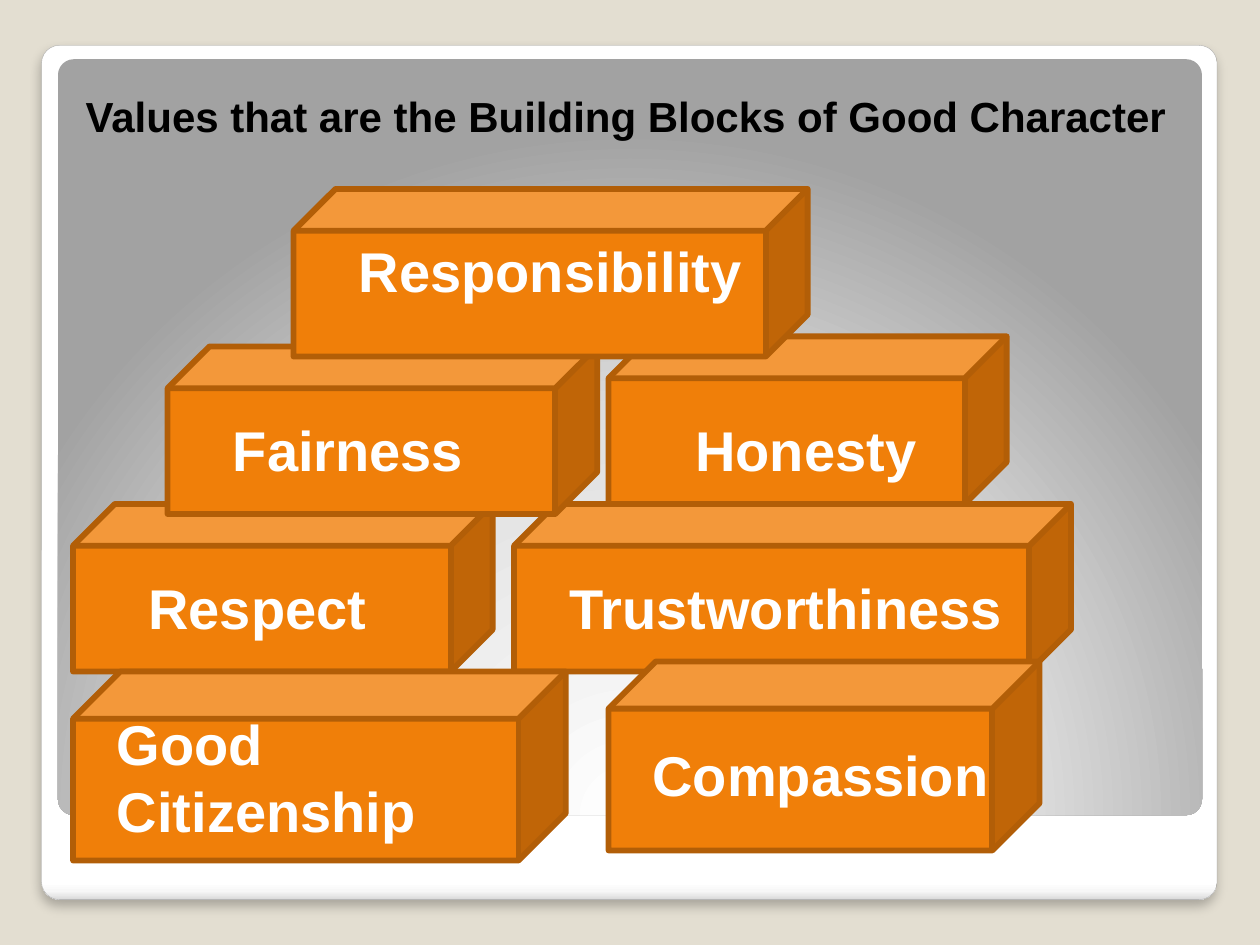
from pptx import Presentation
from pptx.dml.color import RGBColor
from pptx.enum.shapes import MSO_SHAPE
from pptx.enum.text import MSO_ANCHOR, MSO_AUTO_SIZE, PP_ALIGN
from pptx.oxml import parse_xml
from pptx.oxml.ns import nsdecls, qn
from pptx.util import Inches, Pt

SAND = RGBColor(0xE3, 0xDE, 0xD1)
GRAY = RGBColor(0xA4, 0xA4, 0xA4)
ORANGE = RGBColor(0xF0, 0x7F, 0x09)
BROWN = RGBColor(0xB2, 0x5E, 0x07)
WHITE = RGBColor(0xFF, 0xFF, 0xFF)
BLACK = RGBColor(0, 0, 0)

FRAME = [(0, "FFFFFF"), (98, "FFFFFF"), (99, "F7F7F7"), (100, "DADADA")]
DOWN = '<a:lin ang="5400000" scaled="0"/>'
GLOW = [(0, "FFFFFF"), (55, "E1E1E1"), (100, "A2A2A2")]
ROUND = ('<a:path path="circle"><a:fillToRect l="50000" t="175000" '
         'r="50000" b="-75000"/></a:path>')

# Back to front: left, top, width, height
BLOCKS = [
    (4.83, 2.67, 3.16, 1.33),
    (0.58, 4, 3.33, 1.33),
    (4.08, 4, 4.42, 1.33),
    (1.33, 2.75, 3.41, 1.33),
    (0.58, 5.33, 3.91, 1.5),
    (2.33, 1.5, 4.08, 1.33),
    (4.83, 5.25, 3.42, 1.5),
]
VALUES = [
    ("Good Citizenship", 0.83, 5.58, 3.83, 1.18),
    ("Compassion", 5.08, 5.83, 3, 0.64),
    ("Trustworthiness", 4.42, 4.5, 4, 0.64),
    ("Respect", 1.08, 4.5, 2.67, 0.64),
    ("Fairness", 1.75, 3.25, 2.83, 0.64),
    ("Honesty", 5.42, 3.25, 2.75, 0.64),
    ("Responsibility", 2.75, 1.83, 3.75, 0.64),
]


class Deck:
    font = "Arial"

    def __init__(self, slide):
        self.slide = slide
        self.shapes = slide.shapes

    def add(self, kind, box):
        shape = self.shapes.add_shape(kind, *map(Inches, box))
        shape.shadow.inherit = False
        return shape

    def panel(self, box, stops, kind):
        shape = self.add(MSO_SHAPE.ROUNDED_RECTANGLE, box)
        shape.adjustments[0] = 0.021
        shape.line.fill.background()
        shape.fill.background()
        marks = "".join(
            f'<a:gs pos="{pos * 1000}"><a:srgbClr val="{color}"/></a:gs>'
            for pos, color in stops)
        grad = parse_xml(f'<a:gradFill {nsdecls("a")} rotWithShape="1">'
                         f'<a:gsLst>{marks}</a:gsLst>{kind}</a:gradFill>')
        props = shape.element.spPr
        props.replace(props.find(qn("a:noFill")), grad)
        return shape

    def shade(self, shape):
        effects = shape.element.spPr.find(qn("a:effectLst"))
        effects.append(parse_xml(
            f'<a:outerShdw {nsdecls("a")} blurRad="{Pt(6)}" dist="{Pt(4)}" '
            'dir="5400000" algn="t" rotWithShape="0"><a:srgbClr val="000000">'
            '<a:alpha val="25000"/></a:srgbClr></a:outerShdw>'))

    def block(self, box):
        shape = self.add(MSO_SHAPE.CUBE, box)
        shape.fill.solid()
        shape.fill.fore_color.rgb = ORANGE
        shape.line.color.rgb = BROWN
        shape.line.width = Pt(3.35)

    def style(self, shape, text, size, color):
        frame = shape.text_frame
        frame.text = text
        frame.word_wrap = True
        frame.auto_size = MSO_AUTO_SIZE.SHAPE_TO_FIT_TEXT
        frame.vertical_anchor = MSO_ANCHOR.TOP
        line = frame.paragraphs[0]
        line.alignment = PP_ALIGN.LEFT
        font = line.runs[0].font
        font.name, font.size, font.bold = self.font, Pt(size), True
        font.color.rgb = color

    def label(self, text, *box):
        shape = self.shapes.add_textbox(*map(Inches, box))
        self.style(shape, text, 32, WHITE)

    def title(self, text, *box):
        shape = self.shapes.title
        shape.left, shape.top, shape.width, shape.height = map(Inches, box)
        self.style(shape, text, 24, BLACK)
        # Bring the title in front of the panels
        shape.element.getparent().append(shape.element)


def main():
    prs = Presentation()
    prs.slide_width, prs.slide_height = Inches(10), Inches(7.5)
    slide = prs.slides.add_slide(prs.slide_layouts[5])
    back = slide.background.fill
    back.solid()
    back.fore_color.rgb = SAND
    deck = Deck(slide)

    # Framed backdrop
    frame = deck.panel((0.33, 0.36, 9.33, 6.78), FRAME, DOWN)
    frame.line.color.rgb = GRAY
    frame.line.width = Pt(0.16)
    deck.shade(frame)
    deck.panel((0.46, 0.47, 9.08, 6), GLOW, ROUND)

    # Stacked blocks and the values on them
    for box in BLOCKS:
        deck.block(box)
    for value in VALUES:
        deck.label(*value)

    # Title
    deck.title("Values that are the Building Blocks of Good Character",
               0.58, 0.67, 9.08, 0.51)
    prs.save("out.pptx")


if __name__ == "__main__":
    main()
